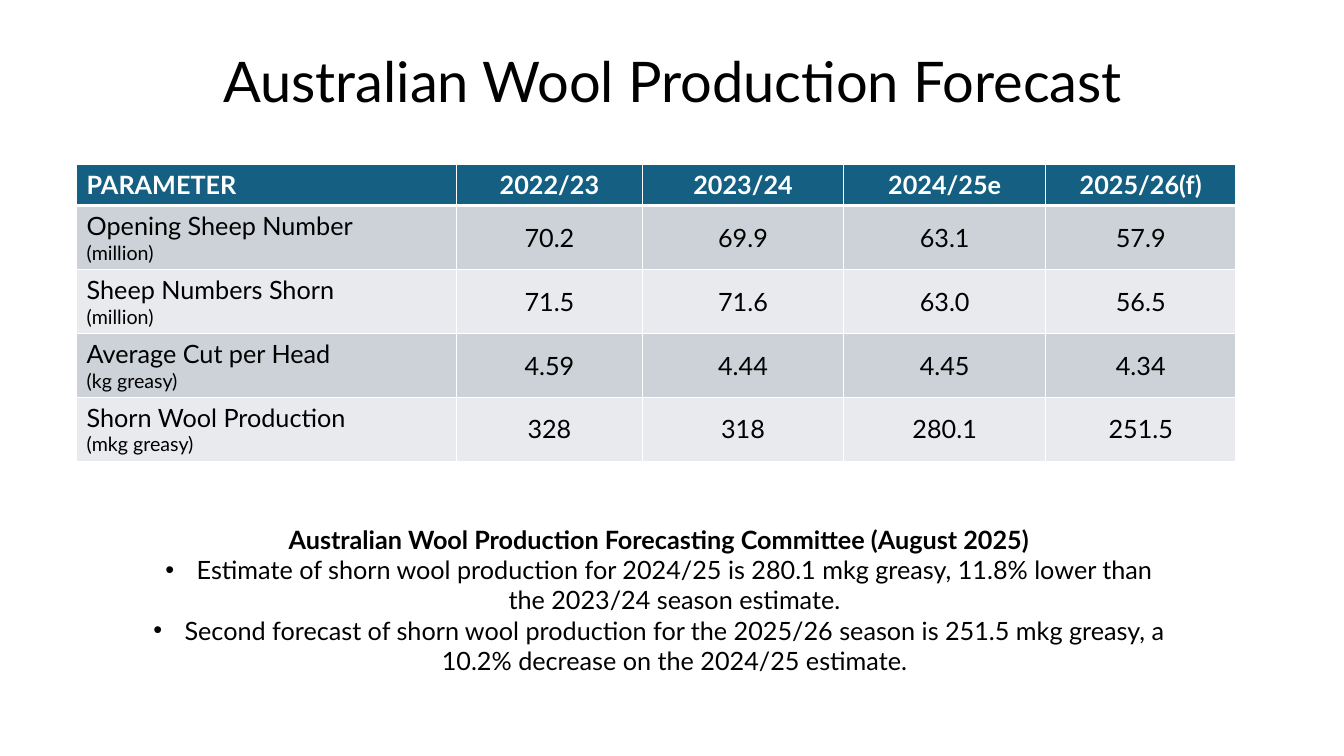
from dataclasses import dataclass

import lxml.etree
import pptx
import pptx.dml.color
import pptx.enum.text
import pptx.oxml.ns
import pptx.slide
import pptx.table
import pptx.text.text
import pptx.util

Inches = pptx.util.Inches
CENTER = pptx.enum.text.PP_ALIGN.CENTER
MIDDLE = pptx.enum.text.MSO_ANCHOR.MIDDLE


@dataclass(frozen=True)
class Theme:
    font: str = "Lato"
    title_size: int = 40
    body_size: int = 18
    unit_size: int = 14
    ink: str = "000000"
    white: str = "FFFFFF"
    header: str = "156082"
    bands: tuple[str, str] = ("CCD2D8", "E8EAED")


@dataclass(frozen=True)
class Parameter:
    name: str
    unit: str
    values: tuple[str, ...]


THEME = Theme()
SEASONS = ("2022/23", "2023/24", "2024/25e", "2025/26(f)")
PARAMETERS = (
    Parameter("Opening Sheep Number", "(million)", ("70.2", "69.9", "63.1", "57.9")),
    Parameter("Sheep Numbers Shorn", "(million)", ("71.5", "71.6", "63.0", "56.5")),
    Parameter("Average Cut per Head", "(kg greasy)", ("4.59", "4.44", "4.45", "4.34")),
    Parameter("Shorn Wool Production", "(mkg greasy)", ("328", "318", "280.1", "251.5")),
)
COLUMN_WIDTHS = (3.77, 1.84, 2, 2, 1.89)
HEADER_HEIGHT, ROW_HEIGHT = 0.41, 0.63
COMMITTEE = "Australian Wool Production Forecasting Committee (August 2025)"
FINDINGS = (
    "Estimate of shorn wool production for 2024/25 is 280.1 mkg greasy, "
    "11.8% lower than the 2023/24 season estimate.",
    "Second forecast of shorn wool production for the 2025/26 season is "
    "251.5 mkg greasy, a 10.2% decrease on the 2024/25 estimate.",
)


def style(paragraph: pptx.text.text._Paragraph, size: int,
          color: str = THEME.ink, bold: bool = False) -> None:
    for run in paragraph.runs:
        run.font.name = THEME.font
        run.font.size = pptx.util.Pt(size)
        run.font.bold = bold
        run.font.color.rgb = pptx.dml.color.RGBColor.from_string(color)


def add_borders(cell: pptx.table._Cell, bottom_width: int, top_width: int) -> None:
    properties = cell._tc.get_or_add_tcPr()
    sides = {"lnL": 1, "lnR": 1, "lnT": top_width, "lnB": bottom_width}
    for position, (side, width) in enumerate(sides.items()):
        line = lxml.etree.Element(pptx.oxml.ns.qn(f"a:{side}"), w=str(pptx.util.Pt(width)))
        fill = lxml.etree.SubElement(line, pptx.oxml.ns.qn("a:solidFill"))
        lxml.etree.SubElement(fill, pptx.oxml.ns.qn("a:srgbClr"), val=THEME.white)
        properties.insert(position, line)


def fill_cell(cell: pptx.table._Cell, text: str, row: int, column: int) -> None:
    is_header = row == 0
    cell.text_frame.text = text
    cell.vertical_anchor = MIDDLE
    background = THEME.header if is_header else THEME.bands[(row - 1) % 2]
    cell.fill.solid()
    cell.fill.fore_color.rgb = pptx.dml.color.RGBColor.from_string(background)
    for index, paragraph in enumerate(cell.text_frame.paragraphs):
        style(paragraph, THEME.unit_size if index else THEME.body_size,
              THEME.white if is_header else THEME.ink, is_header)
        if column:
            paragraph.alignment = CENTER
    add_borders(cell, bottom_width=3 if is_header else 1, top_width=3 if row == 1 else 1)


def add_title(slide: pptx.slide.Slide) -> None:
    title = slide.shapes.add_textbox(Inches(0.92), Inches(0.4), Inches(11.5), Inches(0.88))
    title.text_frame.word_wrap = True
    title.text_frame.vertical_anchor = MIDDLE
    title.text_frame.text = "Australian Wool Production Forecast"
    heading = title.text_frame.paragraphs[0]
    heading.alignment = CENTER
    heading.line_spacing = 0.9
    style(heading, THEME.title_size)


def add_forecast_table(slide: pptx.slide.Slide) -> None:
    rows = [("PARAMETER", *SEASONS)]
    rows += [(f"{item.name}\n{item.unit}", *item.values) for item in PARAMETERS]
    heights = [HEADER_HEIGHT] + [ROW_HEIGHT] * len(PARAMETERS)
    forecast = slide.shapes.add_table(
        len(rows), len(COLUMN_WIDTHS), Inches(0.76), Inches(1.63),
        Inches(sum(COLUMN_WIDTHS)), Inches(sum(heights))).table
    for column, width in zip(forecast.columns, COLUMN_WIDTHS):
        column.width = Inches(width)
    for row, height in zip(forecast.rows, heights):
        row.height = Inches(height)
    for row_index, texts in enumerate(rows):
        for column_index, text in enumerate(texts):
            fill_cell(forecast.cell(row_index, column_index), text, row_index, column_index)


def add_bullet(paragraph: pptx.text.text._Paragraph) -> None:
    properties = paragraph._p.get_or_add_pPr()
    properties.set("marL", str(Inches(0.31)))
    properties.set("indent", str(Inches(-0.31)))
    lxml.etree.SubElement(properties, pptx.oxml.ns.qn("a:buFont"), typeface="Arial")
    lxml.etree.SubElement(properties, pptx.oxml.ns.qn("a:buChar"), char="•")


def add_committee_notes(slide: pptx.slide.Slide) -> None:
    summary = slide.shapes.add_textbox(Inches(1.36), Inches(5.15), Inches(10.35), Inches(1.62))
    summary.text_frame.word_wrap = True
    summary.text_frame.auto_size = pptx.enum.text.MSO_AUTO_SIZE.SHAPE_TO_FIT_TEXT
    summary.text_frame.text = "\n".join((COMMITTEE, *FINDINGS))
    for index, paragraph in enumerate(summary.text_frame.paragraphs):
        paragraph.alignment = CENTER
        style(paragraph, THEME.body_size, bold=index == 0)
        if index:
            add_bullet(paragraph)


def main() -> None:
    presentation = pptx.Presentation()
    presentation.slide_width = Inches(13.33)
    presentation.slide_height = Inches(7.5)
    slide = presentation.slides.add_slide(presentation.slide_layouts[6])
    # Heading
    add_title(slide)
    # Seasonal figures
    add_forecast_table(slide)
    # Committee findings
    add_committee_notes(slide)
    presentation.save("out.pptx")


if __name__ == "__main__":
    main()
